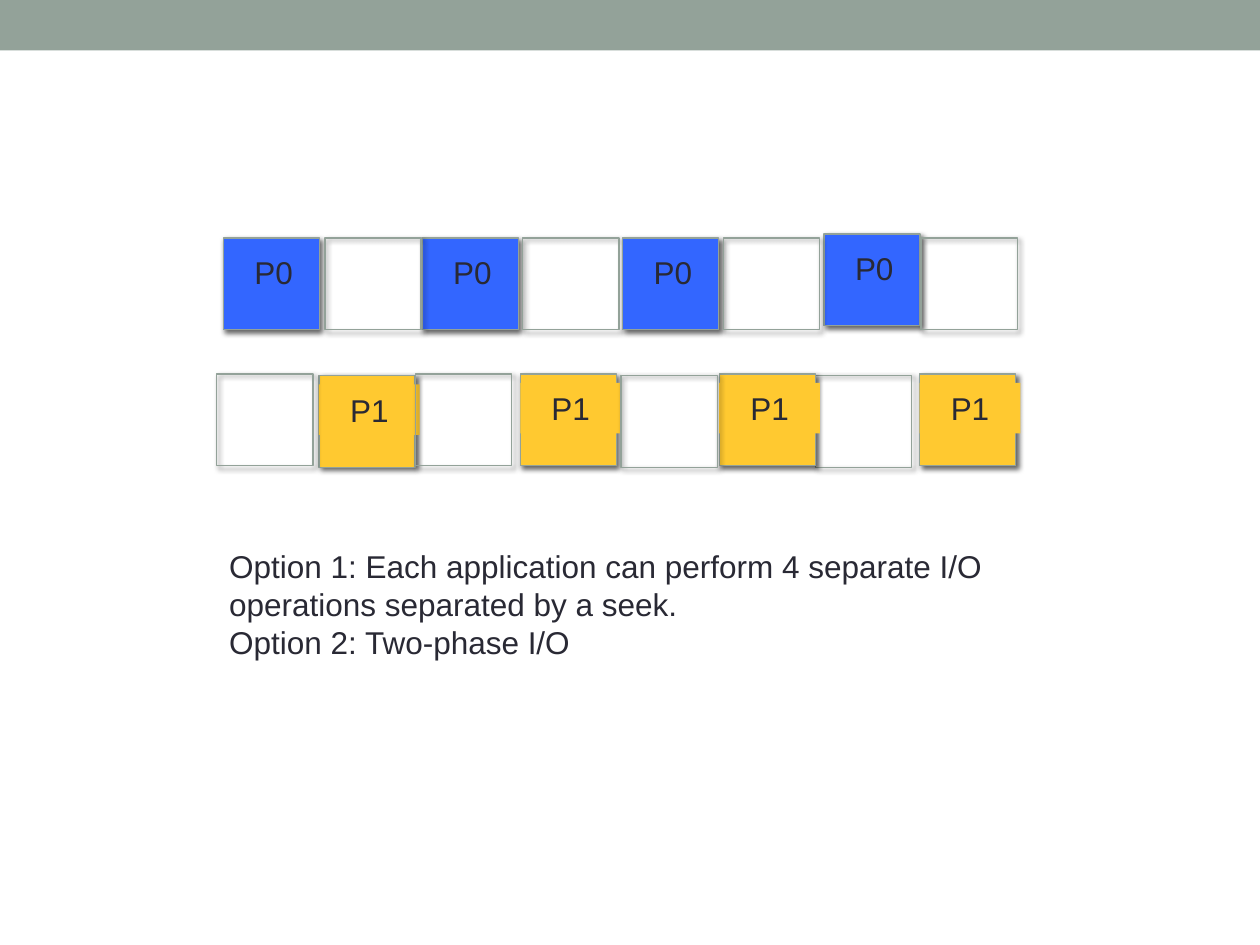
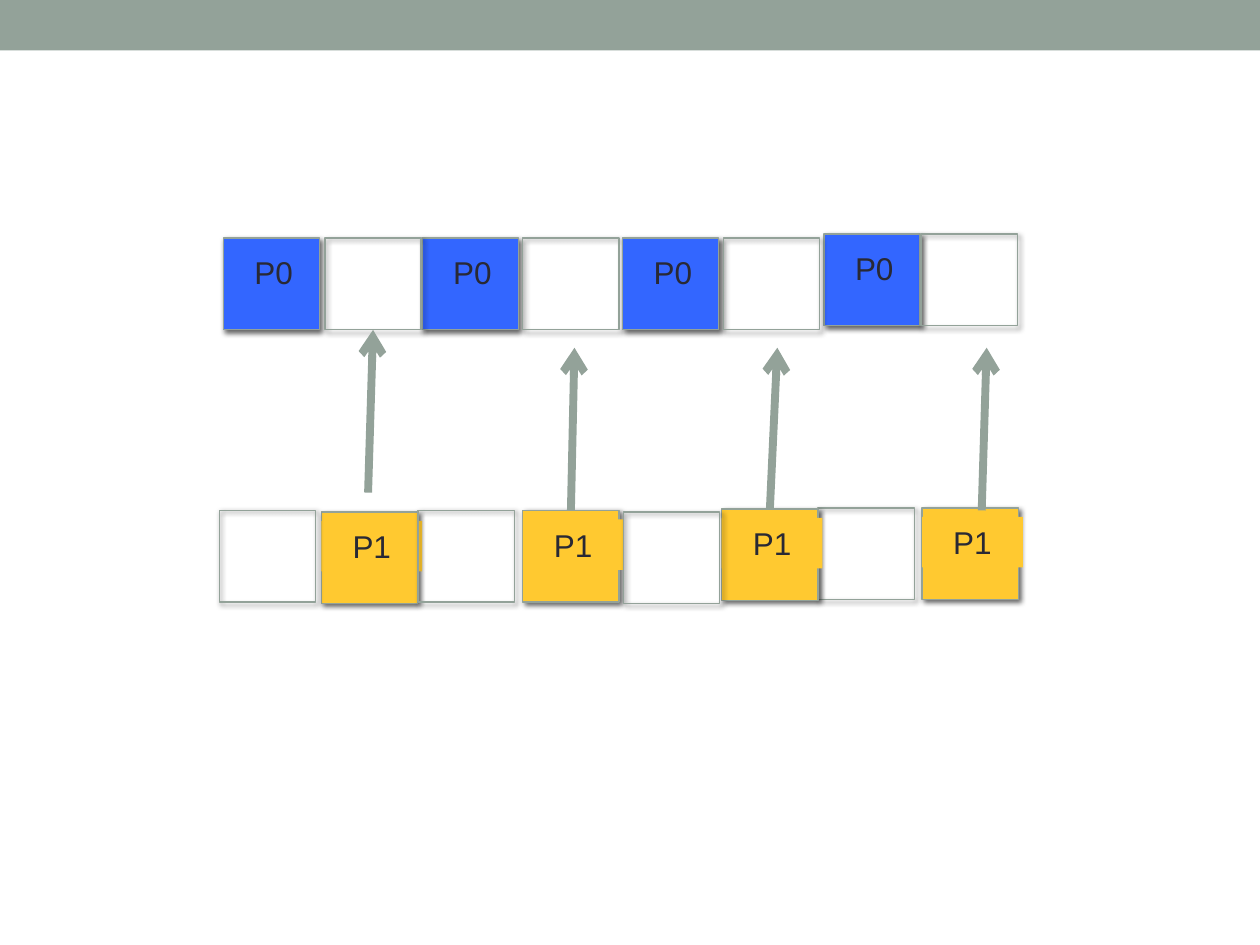
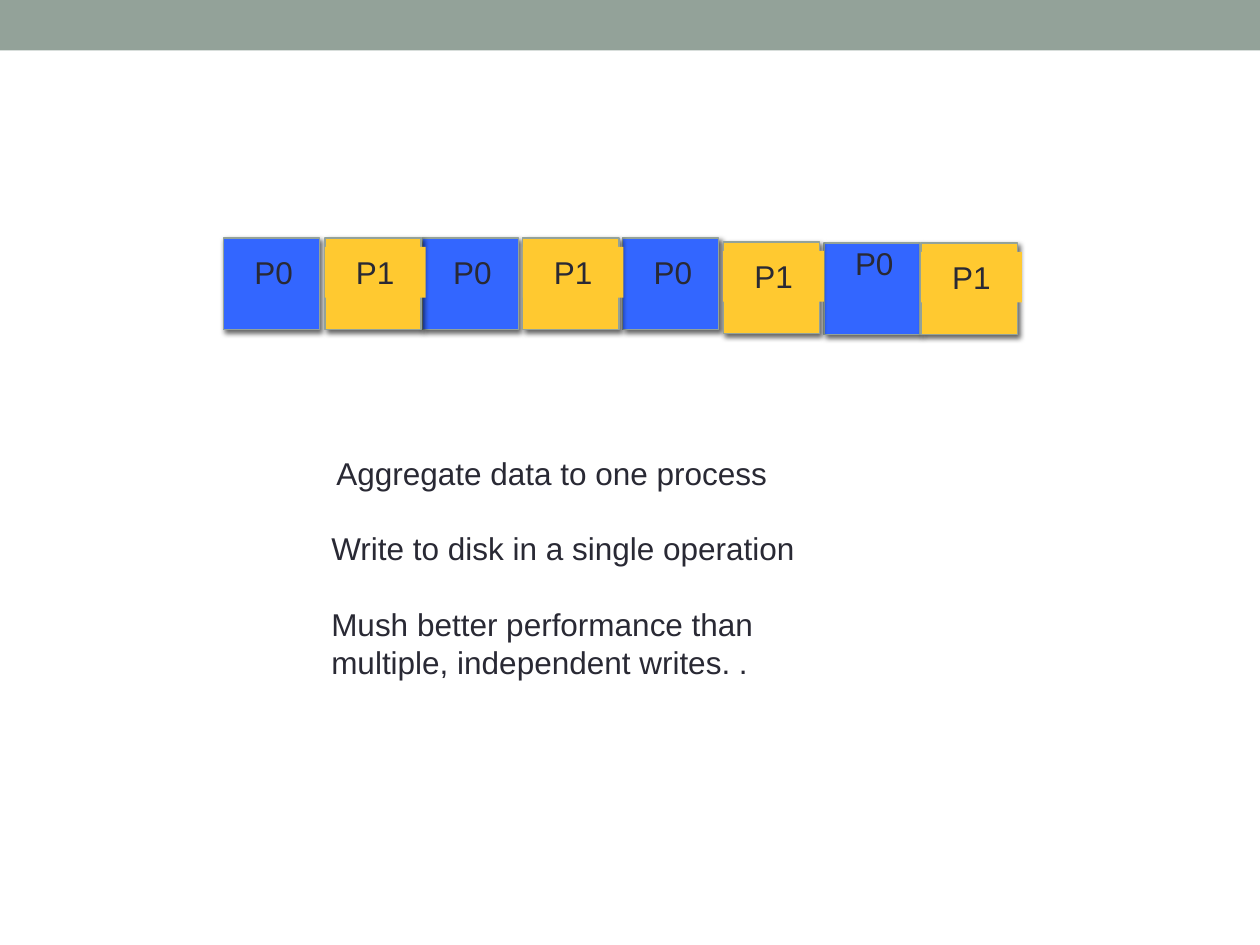
from lxml.etree import SubElement
from pptx import Presentation
from pptx.dml.color import RGBColor
from pptx.enum.shapes import MSO_CONNECTOR as CONNECTOR, MSO_SHAPE as SHAPE
from pptx.enum.text import MSO_ANCHOR as ANCHOR, PP_ALIGN as ALIGN
from pptx.oxml.ns import qn
from pptx.util import Cm, Pt

SAGE = RGBColor(0x93, 0xA2, 0x99)
BLUE = RGBColor(0x33, 0x66, 0xFF)
YELLOW = RGBColor(0xFF, 0xC9, 0x30)
INK = RGBColor(0x29, 0x29, 0x34)

FONT = "Arial"
LINE_HEIGHT = 21.7
SLIDE_WIDTH, SLIDE_HEIGHT = 25.4, 19.05
BLOCK_WIDTH, BLOCK_HEIGHT = 1.94, 1.85
LABEL_WIDTH, LABEL_HEIGHT, LABEL_DROP = 2.03, 1.02, 0.18

PROCESS_COLOURS = {"P0": BLUE, "P1": YELLOW}
UPPER_ORIGIN = (4.5, 4.8)
UPPER_LEFTS = (0, 2.05, 4.01, 6.04, 8.05, 10.08, 12.11, 14.07)
LOWER_LEFTS = (0, 2.06, 4.01, 6.12, 8.15, 10.13, 12.07, 14.17)
UPPER_ORDER = (0, 2, 6, 1, 3, 4, 7, 5)
LOWER_ORDER = (1, 2, 0, 6, 5, 7, 3, 4)
MERGED_ORDER = (0, 2, 6, 4, 1, 5, 7, 3)
P0_SLOTS = ("P0", "") * 4
P1_SLOTS = ("", "P1") * 4
MERGED_SLOTS = ("P0", "P1") * 4


def add_rectangle(slide, left, top, width, height, colour=None):
    shape = slide.shapes.add_shape(
        SHAPE.RECTANGLE, Cm(left), Cm(top), Cm(width), Cm(height))
    shape.shadow.inherit = False
    if colour is None:
        shape.fill.background()
    else:
        shape.fill.solid()
        shape.fill.fore_color.rgb = colour
    shape.line.fill.background()
    return shape


def write_text(shape, lines, alignment=ALIGN.LEFT, gap=0):
    frame = shape.text_frame
    frame.word_wrap = True
    frame.vertical_anchor = ANCHOR.TOP
    frame.text = "\n".join(lines)
    for index, paragraph in enumerate(frame.paragraphs):
        paragraph.alignment = alignment
        paragraph.line_spacing = Pt(LINE_HEIGHT)
        paragraph.space_before = Pt(gap if index else 0)
        paragraph.font.name = FONT
        paragraph.font.size = Pt(18)
        paragraph.font.color.rgb = INK


def add_text(slide, left, top, width, height, lines, gap=0):
    box = slide.shapes.add_textbox(Cm(left), Cm(top), Cm(width), Cm(height))
    write_text(box, lines, gap=gap)


def add_block_shadow(block):
    effects = block.element.spPr.find(qn("a:effectLst"))
    shadow = SubElement(effects, qn("a:outerShdw"), blurRad="38100",
                        dist="25400", dir="2700000", rotWithShape="0")
    colour = SubElement(shadow, qn("a:srgbClr"), val="000000")
    SubElement(colour, qn("a:alpha"), val="60000")


def add_block(slide, left, top, process, label_drop):
    block = add_rectangle(slide, left, top, BLOCK_WIDTH, BLOCK_HEIGHT,
                          PROCESS_COLOURS.get(process))
    block.line.color.rgb = SAGE
    block.line.width = Pt(0.75)
    add_block_shadow(block)
    if process:
        label = add_rectangle(slide, left, top + label_drop,
                              LABEL_WIDTH, LABEL_HEIGHT,
                              YELLOW if process == "P1" else None)
        write_text(label, [process], ALIGN.CENTER)
    return block


def add_block_row(slide, origin, lefts, order, processes, drops,
                  label_drops=None):
    left, top = origin
    label_drops = label_drops or {}
    return {
        slot: add_block(slide, left + lefts[slot], top + drops.get(slot, 0),
                        processes[slot], label_drops.get(slot, LABEL_DROP))
        for slot in order
    }


def add_arrow(slide, left, bottom):
    arrow = slide.shapes.add_connector(
        CONNECTOR.STRAIGHT, Cm(left), Cm(bottom),
        Cm(left + 0.1), Cm(bottom - 3.28))
    arrow.line.color.rgb = SAGE
    arrow.line.width = Pt(4.5)
    SubElement(arrow.line._get_or_add_ln(), qn("a:tailEnd"), type="arrow")
    SubElement(arrow.element.spPr, qn("a:effectLst"))
    return arrow


def add_banded_slide(presentation):
    slide = presentation.slides.add_slide(presentation.slide_layouts[6])
    add_rectangle(slide, 0, 0, SLIDE_WIDTH, 1.02, SAGE)
    return slide


def build_options_slide(presentation):
    slide = add_banded_slide(presentation)
    add_block_row(slide, UPPER_ORIGIN, UPPER_LEFTS, UPPER_ORDER, P0_SLOTS,
                  {6: -0.08})
    add_block_row(slide, (4.37, 7.54), LOWER_LEFTS, LOWER_ORDER, P1_SLOTS,
                  {1: 0.03, 4: 0.03, 6: 0.03})
    add_text(slide, 4.37, 10.9, 16.23, 3.33, [
        "Option 1: Each application can perform 4 separate I/O "
        "operations separated by a seek.",
        "Option 2: Two-phase I/O",
    ])


def build_exchange_slide(presentation):
    slide = add_banded_slide(presentation)
    targets = add_block_row(slide, UPPER_ORIGIN, UPPER_LEFTS, UPPER_ORDER,
                            P0_SLOTS, {6: -0.08, 7: -0.08})
    sources = add_block_row(slide, (4.42, 10.29), LOWER_LEFTS, LOWER_ORDER,
                            P1_SLOTS, {1: 0.03, 4: 0.03, 5: -0.03,
                                       6: -0.05, 7: -0.05})
    add_arrow(slide, 7.42, 9.93).end_connect(targets[1], 2)
    for slot, left in ((3, 11.48), (5, 15.57)):
        add_arrow(slide, left, 10.29).begin_connect(sources[slot], 0)
    add_arrow(slide, 19.79, 10.29)


def build_aggregate_slide(presentation):
    slide = add_banded_slide(presentation)
    add_block_row(slide, UPPER_ORIGIN, UPPER_LEFTS, MERGED_ORDER,
                  MERGED_SLOTS, {5: 0.08, 6: 0.1, 7: 0.1}, {6: -0.1})
    add_text(slide, 6.53, 9.02, 16.13, 1.02,
             ["Aggregate data to one process"])
    add_text(slide, 6.43, 10.54, 11.07, 3.33, [
        "Write to disk in a single operation",
        "Mush better performance than multiple, independent writes. .",
    ], gap=LINE_HEIGHT)


def main():
    presentation = Presentation()
    presentation.slide_width = Cm(SLIDE_WIDTH)
    presentation.slide_height = Cm(SLIDE_HEIGHT)
    build_options_slide(presentation)
    build_exchange_slide(presentation)
    build_aggregate_slide(presentation)
    presentation.save("out.pptx")


if __name__ == "__main__":
    main()
